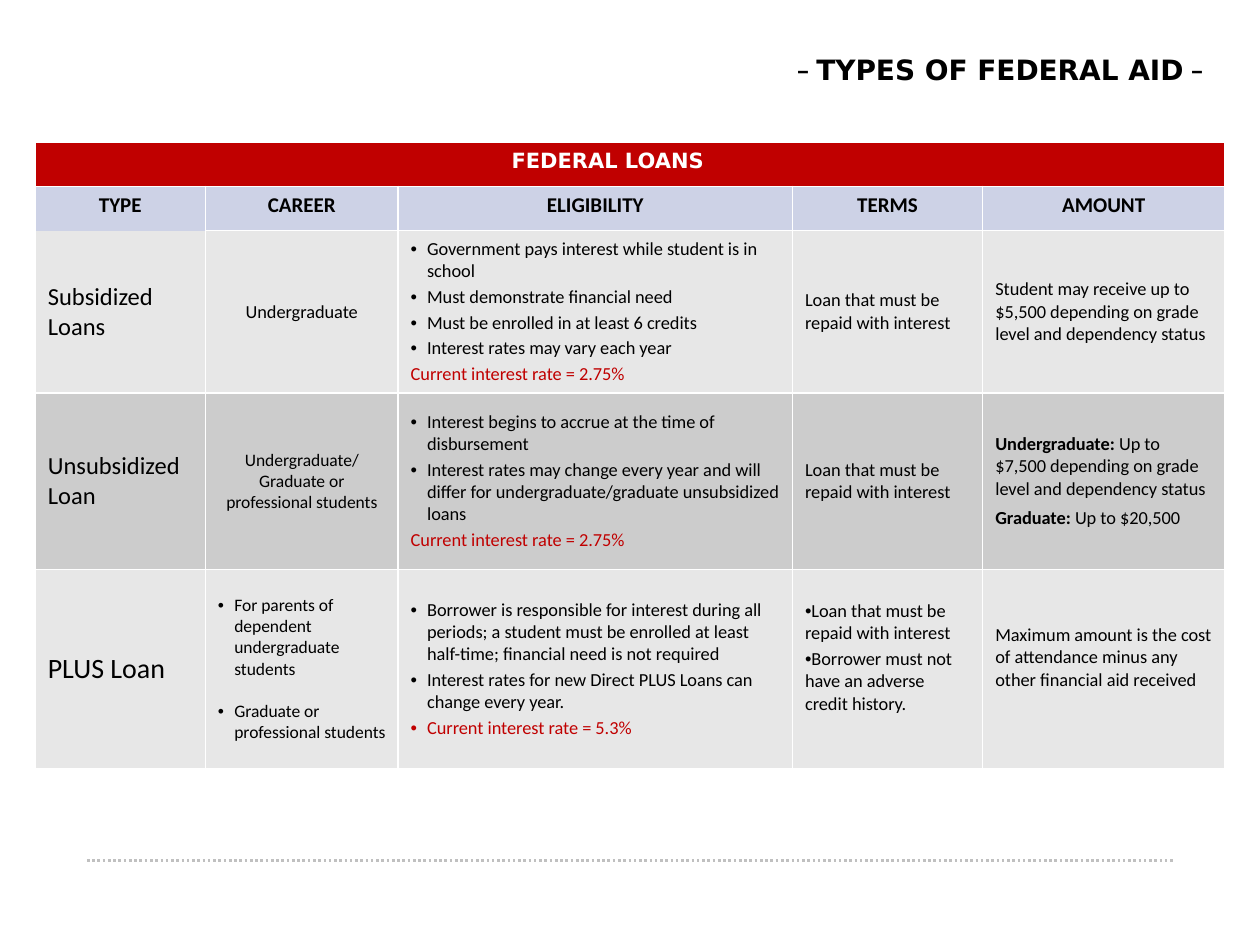
from lxml import etree
from pptx import Presentation
from pptx.dml.color import RGBColor
from pptx.enum import dml, shapes, text
from pptx.oxml import ns
from pptx.util import Inches, Pt

HUES = {"red": "C00000", "head": "CDD2E6", "light": "E7E7E7", "dark": "CCCCCC",
        "white": "FFFFFF", "black": "000000", "rule": "C0C0C0"}
BODY, CAPS = "Calibri", "DejaVu Sans"
MID = text.PP_ALIGN.CENTER

COLS = [1.35, 1.53, 3.13, 1.51, 1.92]
ROWS = [0.35, 0.35, 1.29, 1.4, 1.58]
HEADS = ["TYPE", "CAREER", "ELIGIBILITY", "TERMS", "AMOUNT"]
REPAY = "Loan that must be repaid with interest"

# Each loan: name, name size, career size, then one list of paragraphs per cell.
# "• " marks a bullet, "! " red text, and "|" ends a bold label.
LOANS = [
    ("Subsidized Loans", 14, 10.5, [
        ["Undergraduate"],
        ["• Government pays interest while student is in school",
         "• Must demonstrate financial need",
         "• Must be enrolled in at least 6 credits",
         "• Interest rates may vary each year",
         "! Current interest rate = 2.75%"],
        [REPAY],
        ["Student may receive up to $5,500 depending on grade level "
         "and dependency status"]]),
    ("Unsubsidized Loan", 14, 10, [
        ["Undergraduate/", "Graduate or professional students"],
        ["• Interest begins to accrue at the time of disbursement",
         "• Interest rates may change every year and will differ for "
         "undergraduate/graduate unsubsidized loans",
         "! Current interest rate = 2.75%"],
        [REPAY],
        ["Undergraduate: |Up to $7,500 depending on grade level "
         "and dependency status",
         "Graduate: |Up to $20,500"]]),
    ("PLUS Loan", 16, 10, [
        ["• For parents of dependent undergraduate students",
         "• Graduate or professional students"],
        ["• Borrower is responsible for interest during all periods; a student "
         "must be enrolled at least half-time; financial need is not required",
         "• Interest rates for new Direct PLUS Loans can change every year.",
         "! • Current interest rate = 5.3%"],
        ["• " + REPAY, "• Borrower must not have an adverse credit history."],
        ["Maximum amount is the cost of attendance minus any other "
         "financial aid received"]]),
]


def rgb(hue):
    return RGBColor.from_string(HUES[hue])


def style(font, size, hue="black", bold=False, face=BODY):
    font.size, font.bold, font.name = Pt(size), bold, face
    font.color.rgb = rgb(hue)


def indent(para, left, first=0, bullet=False):
    props = para._p.get_or_add_pPr()
    props.set("marL", str(Inches(left)))
    props.set("indent", str(Inches(first)))
    if bullet:
        etree.SubElement(props, ns.qn("a:buFont")).set("typeface", "Arial")
        etree.SubElement(props, ns.qn("a:buChar")).set("char", "•")


def paint(cell, hue, bare=""):
    """Draw white borders, save on the bare side, and fill the cell."""
    props = cell._tc.get_or_add_tcPr()
    for side in "LRTB":
        line = etree.SubElement(props, ns.qn("a:ln" + side), w=str(Pt(1)))
        if side == bare:
            etree.SubElement(line, ns.qn("a:noFill"))
        else:
            fill = etree.SubElement(line, ns.qn("a:solidFill"))
            etree.SubElement(fill, ns.qn("a:srgbClr"), val=HUES["white"])
    cell.fill.solid()
    cell.fill.fore_color.rgb = rgb(hue)


def write(cell, lines, size, align=None, gap=0, hang=0.13, bold=False):
    frame = cell.text_frame
    for i, line in enumerate(lines):
        para = frame.paragraphs[0] if i == 0 else frame.add_paragraph()
        red = line.startswith("! ")
        line = line.removeprefix("! ")
        if line.startswith("• "):
            indent(para, hang, -0.13, True)
        label, mark, rest = line.removeprefix("• ").rpartition("|")
        if mark:
            para.add_run().text = label
            para.runs[0].font.bold = True
        para.add_run().text = rest
        para.alignment = align
        para.space_before, para.space_after = Pt(gap if i else 0), Pt(gap)
        style(para.font, size, "red" if red else "black", bold)


def add_loan(table, row, loan):
    name, big, small, parts = loan
    cells = [table.cell(row, col) for col in range(len(COLS))]
    for col, cell in enumerate(cells):
        paint(cell, "dark" if row == 3 else "light",
              "T" if (row, col) == (2, 0) else "")
        cell.vertical_anchor = text.MSO_ANCHOR.MIDDLE
    career, rules, terms, amount = parts
    plus = row == 4
    write(cells[0], [name], big)
    write(cells[1], career, small, None if plus else MID)
    write(cells[2], rules, 10.5, gap=1)
    write(cells[3], terms, 10.5, gap=1 if plus else 0, hang=0)
    write(cells[4], amount, 10.5, gap=2 if row == 3 else 0)
    if plus:
        # One line of room between the careers; the last two cells sit higher
        cells[1].text_frame.paragraphs[1].space_before = Pt(12)
        for cell in cells[3:]:
            cell.margin_bottom = Inches(0.23)


def add_grid(slide):
    table = slide.shapes.add_table(
        len(ROWS), len(COLS), Inches(0.28), Inches(1.13),
        Inches(sum(COLS)), Inches(sum(ROWS))).table
    table.first_row = table.horz_banding = False
    for col, wide in zip(table.columns, COLS):
        col.width = Inches(wide)
    for row, high in zip(table.rows, ROWS):
        row.height = Inches(high)

    # Banner across all columns
    banner = table.cell(0, 0)
    for col in range(len(COLS)):
        paint(table.cell(0, col), "red")
    banner.merge(table.cell(0, len(COLS) - 1))
    para = banner.text_frame.paragraphs[0]
    para.text = "FEDERAL LOANS"
    indent(para, 3.68)
    style(para.font, 12, "white", True, CAPS)

    # Column heads
    for col, head in enumerate(HEADS):
        cell = table.cell(1, col)
        paint(cell, "head", "" if col else "B")
        write(cell, [head], 12, MID, bold=True)

    for row, loan in enumerate(LOANS, 2):
        add_loan(table, row, loan)


def add_title(slide):
    box = slide.shapes.add_textbox(Inches(6.22), Inches(0.37),
                                   Inches(3.5), Inches(0.37))
    box.text_frame.word_wrap = False
    para = box.text_frame.paragraphs[0]
    for words, face in [("– ", BODY), ("TYPES OF FEDERAL AID", CAPS), (" –", BODY)]:
        run = para.add_run()
        run.text = words
        style(run.font, 16, bold=True, face=face)


def add_rule(slide):
    rule = slide.shapes.add_connector(
        shapes.MSO_CONNECTOR.STRAIGHT, Inches(0.69), Inches(6.83),
        Inches(9.32), Inches(6.83))
    rule.line.color.rgb = rgb("rule")
    rule.line.width = Pt(1.5)
    rule.line.dash_style = dml.MSO_LINE.ROUND_DOT
    etree.SubElement(rule._element.spPr, ns.qn("a:effectLst"))


def main():
    deck = Presentation()
    deck.slide_width, deck.slide_height = Inches(10), Inches(7.5)
    slide = deck.slides.add_slide(deck.slide_layouts[6])
    add_rule(slide)
    add_grid(slide)
    add_title(slide)
    deck.save("out.pptx")


if __name__ == "__main__":
    main()
